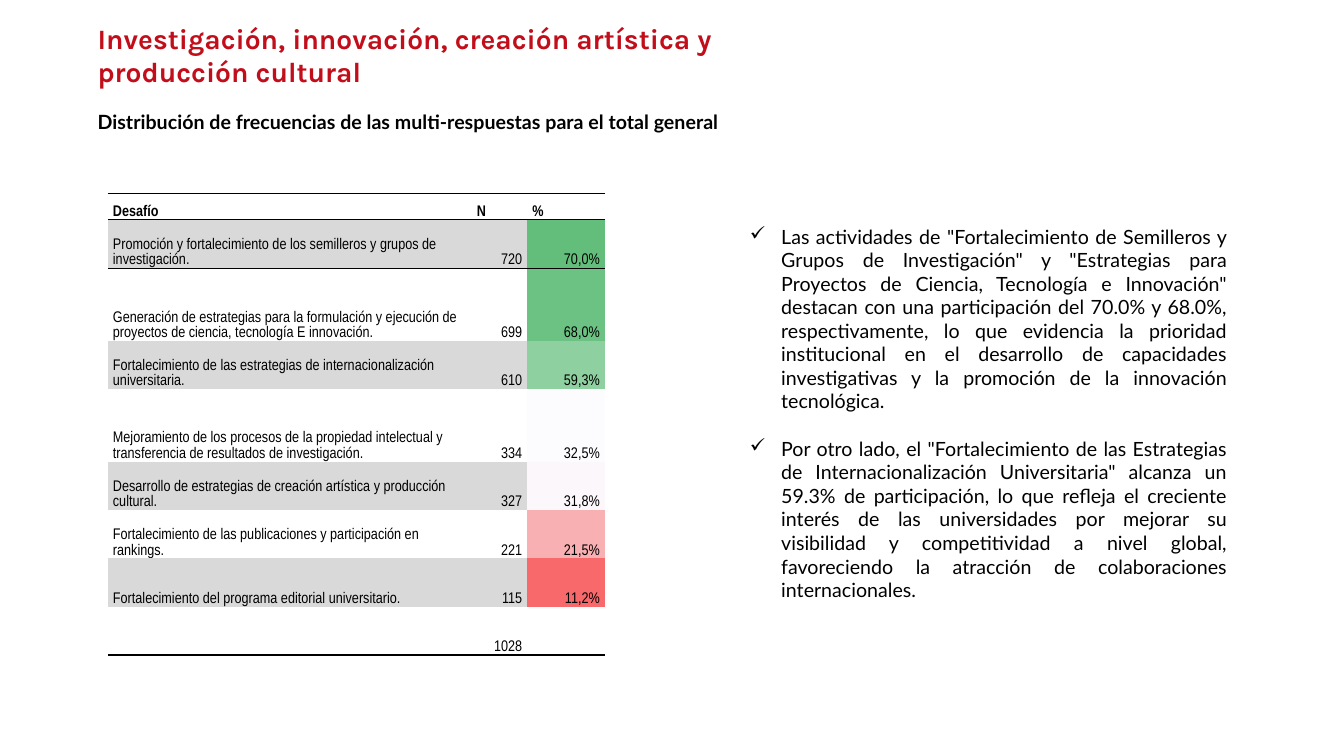
from lxml import etree
from pptx import Presentation
from pptx import util as u
from pptx.dml.color import RGBColor
from pptx.enum import text as tx
from pptx.oxml import ns

RED = RGBColor(0xC2, 0x0E, 0x1A)
BLACK = RGBColor(0, 0, 0)
GREY = RGBColor(0xD9, 0xD9, 0xD9)
PLAIN = "{2D5ABB26-0587-4C30-8999-92F81FD0307C}"  # no style, no grid


def write(para, words, size=14, face="Lato", color=BLACK, bold=False,
          align=None, line=None, after=None, before=None, mark=None):
    if mark:
        props = para._p.get_or_add_pPr()
        props.set("marL", str(u.Inches(0.31)))
        props.set("indent", str(u.Inches(-0.31)))
        etree.SubElement(props, ns.qn("a:buChar")).set("char", mark)
    para.alignment = align
    para.line_spacing = line
    para.space_after = after
    para.space_before = before
    run = para.add_run()
    run.text = words
    run.font.size = u.Pt(size)
    run.font.name = face
    run.font.bold = bold
    run.font.color.rgb = color


def border(cell, side):
    edge = etree.SubElement(cell._tc.get_or_add_tcPr(), ns.qn("a:" + side))
    edge.set("w", str(u.Pt(1)))
    fill = etree.SubElement(edge, ns.qn("a:solidFill"))
    etree.SubElement(fill, ns.qn("a:srgbClr")).set("val", str(BLACK))


deck = Presentation()
deck.slide_width, deck.slide_height = u.Inches(13.33), u.Inches(7.5)
slide = deck.slides.add_slide(deck.slide_layouts[6])

# Text boxes: title, subtitle, findings
frames = []
for spot in [(0.87, 0.16, 7.28, 0.77), (0.87, 1.04, 6.56, 0.57),
             (7.34, 2.18, 4.93, 3.87)]:
    frame = slide.shapes.add_textbox(*map(u.Inches, spot)).text_frame
    frame.word_wrap = True
    frames.append(frame)
title, sub, notes = frames

write(title.paragraphs[0],
      "Investigación, innovación, creación artística y producción cultural",
      size=20, face="Karla", color=RED, bold=True)
write(sub.paragraphs[0],
      "Distribución de frecuencias de las multi-respuestas para el total general",
      bold=True)

# Findings
style = dict(align=tx.PP_ALIGN.JUSTIFY, mark="✓")
write(notes.paragraphs[0],
      'Las actividades de "Fortalecimiento de Semilleros y Grupos de '
      'Investigación" y "Estrategias para Proyectos de Ciencia, Tecnología e '
      'Innovación" destacan con una participación del 70.0% y 68.0%, '
      'respectivamente, lo que evidencia la prioridad institucional en el '
      'desarrollo de capacidades investigativas y la promoción de la '
      'innovación tecnológica.', **style)
write(notes.add_paragraph(),
      'Por otro lado, el "Fortalecimiento de las Estrategias de '
      'Internacionalización Universitaria" alcanza un 59.3% de participación, '
      'lo que refleja el creciente interés de las universidades por mejorar su '
      'visibilidad y competitividad a nivel global, favoreciendo la atracción '
      'de colaboraciones internacionales.', before=u.Pt(17), **style)

# Table: height, challenge, count, share, share colour
rows = [
    (0.26, "Desafío", "N", "%", None),
    (0.48, "Promoción y fortalecimiento de los semilleros y grupos de "
           "investigación.", "720", "70,0%", "63BE7B"),
    (0.72, "Generación de estrategias para la formulación y ejecución de "
           "proyectos de ciencia, tecnología E innovación.",
     "699", "68,0%", "6CC283"),
    (0.48, "Fortalecimiento de las estrategias de internacionalización "
           "universitaria.", "610", "59,3%", "8FD0A1"),
    (0.72, "Mejoramiento de los procesos de la propiedad intelectual y "
           "transferencia de resultados de investigación.",
     "334", "32,5%", "FCFCFF"),
    (0.48, "Desarrollo de estrategias de creación artística y producción "
           "cultural.", "327", "31,8%", "FBF7FA"),
    (0.48, "Fortalecimiento de las publicaciones y participación en rankings.",
     "221", "21,5%", "F9B0B2"),
    (0.48, "Fortalecimiento del programa editorial universitario.",
     "115", "11,2%", "F8696B"),
    (0.48, "", "1028", "", None),
]
last = len(rows) - 1
grid = slide.shapes.add_table(len(rows), 3, u.Inches(1.07), u.Inches(1.92),
                              u.Inches(4.93), u.Inches(4.58)).table
grid.first_row = grid.horz_banding = False
grid._tbl.tblPr.find(ns.qn("a:tableStyleId")).text = PLAIN
for col, wide in zip(grid.columns, (3.61, 0.55, 0.77)):
    col.width = u.Inches(wide)

for r, (high, *words, tint) in enumerate(rows):
    grid.rows[r].height = u.Inches(high)
    for c, word in enumerate(words):
        cell = grid.cell(r, c)
        cell.margin_left = cell.margin_right = u.Inches(0.05)
        cell.margin_top = cell.margin_bottom = 0
        cell.vertical_anchor = tx.MSO_ANCHOR.BOTTOM
        # Rules around the header and under the total
        if r < 2:
            border(cell, "lnT")
        if r in (0, last):
            border(cell, "lnB")
        # Colour scale in the last column, grey on odd rows
        if c == 2 and tint:
            cell.fill.solid()
            cell.fill.fore_color.rgb = RGBColor.from_string(tint)
        elif r % 2:
            cell.fill.solid()
            cell.fill.fore_color.rgb = GREY
        else:
            cell.fill.background()
        if word:
            right = tx.PP_ALIGN.RIGHT if r and c else None
            write(cell.text_frame.paragraphs[0], word, size=11,
                  face="Arial Narrow", bold=r == 0, align=right,
                  line=1.07, after=u.Pt(8))

deck.save("out.pptx")
